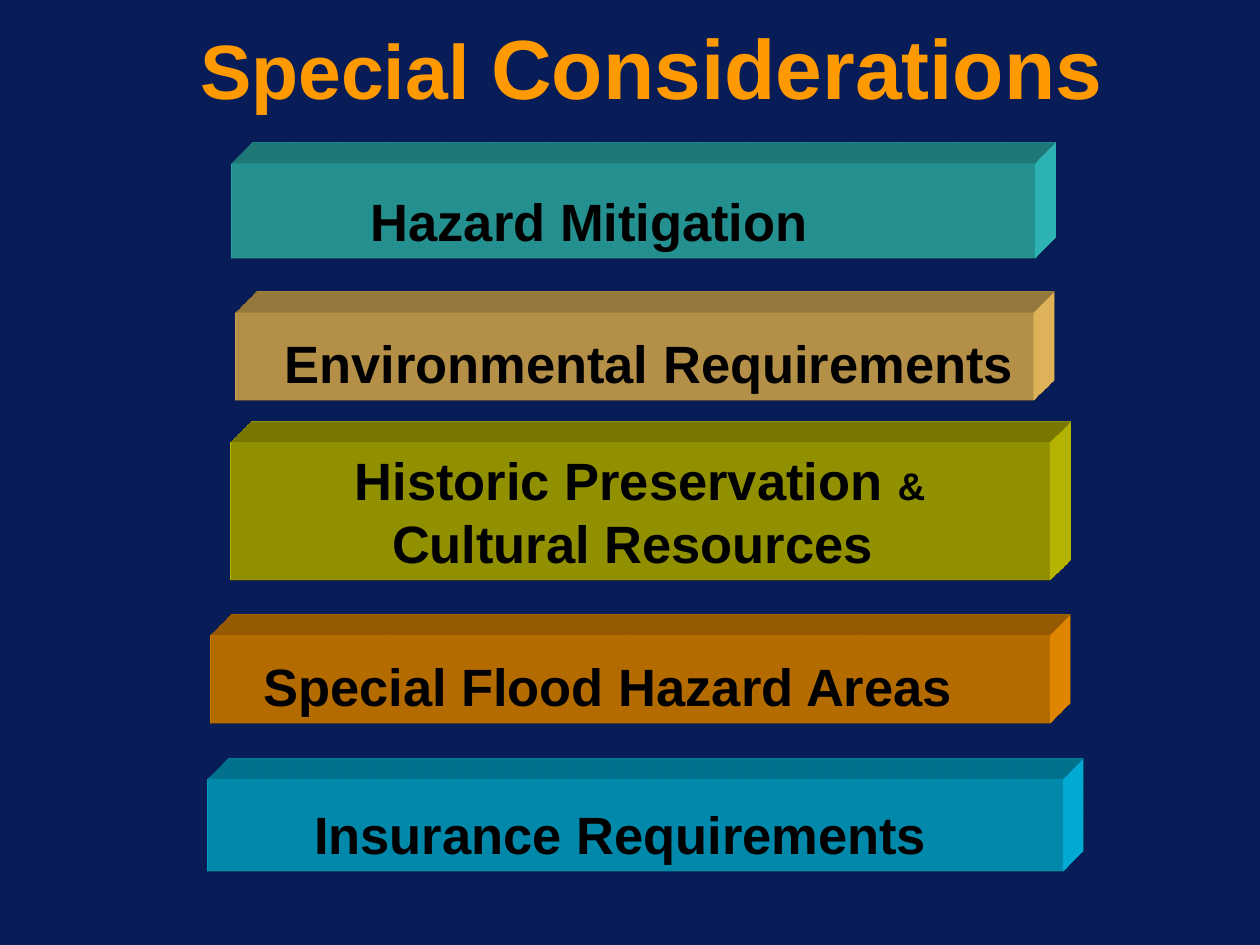
from lxml.etree import fromstring
from pptx import Presentation
from pptx.dml.color import RGBColor as Rgb
from pptx.enum.shapes import MSO_SHAPE as Form
from pptx.enum.text import MSO_ANCHOR as Anchor, MSO_AUTO_SIZE as Fit, PP_ALIGN as Align
from pptx.util import Inches, Pt

HUES = {"navy": "081D58", "orange": "FF9900", "black": "000000", "teal": "33CCCC",
        "sand": "FFCC66", "olive": "CCCC00", "cyan": "00C2F0"}
NS = 'xmlns:a="http://schemas.openxmlformats.org/drawingml/2006/main"'
SCENE = (f'<a:scene3d {NS}><a:camera prst="legacyObliqueTopRight"/>'
         '<a:lightRig rig="legacyFlat3" dir="b"/></a:scene3d>')
DEPTH = (f'<a:sp3d {NS} extrusionH="430200" prstMaterial="legacyMatte">'
         '<a:bevelT w="13500" h="13500" prst="angle"/><a:bevelB w="13500" h="13500" prst="angle"/>'
         '<a:extrusionClr><a:srgbClr val="%s"/></a:extrusionClr></a:sp3d>')
CELL = 0.1   # grid step in inches: 100 columns by 75 rows
SPACE = 0.116  # width of one blank at 30 pt, in inches


def hue(name):
    return Rgb.from_string(HUES[name])


class Deck:
    def __init__(self):
        self.prs = Presentation()
        self.prs.slide_width, self.prs.slide_height = Inches(100 * CELL), Inches(75 * CELL)
        self.slide = self.prs.slides.add_slide(self.prs.slide_layouts[6])
        fill = self.slide.background.fill
        fill.solid()
        fill.fore_color.rgb = hue("navy")

    def grid(self, *cells):
        return [Inches(cell * CELL) for cell in cells]

    def line(self, para, runs, color, gap=1.0, pad=0):
        """Write one centred line; pad shifts it right (+) or left (-), in blanks."""
        if pad:
            side = "marL" if pad > 0 else "marR"
            para._p.get_or_add_pPr().set(side, str(Inches(abs(pad) * SPACE)))
        para.alignment, para.line_spacing = Align.CENTER, gap
        for text, size in runs:
            run = para.add_run()
            run.text = text
            look = {"name": "Arial", "size": Pt(size), "bold": True}
            for key, value in look.items():
                setattr(run.font, key, value)
            run.font.color.rgb = hue(color)

    def title(self, box, runs):
        frame = self.slide.shapes.add_textbox(*self.grid(*box)).text_frame
        frame.word_wrap, frame.vertical_anchor = True, Anchor.MIDDLE
        self.line(frame.paragraphs[0], runs, "orange")

    def bar(self, box, color, lines, gap=1.0):
        """Draw an extruded block with its label."""
        block = self.slide.shapes.add_shape(Form.RECTANGLE, *self.grid(*box))
        block.shadow.inherit = False
        block.fill.solid()
        block.fill.fore_color.rgb = hue(color)
        block.line.fill.background()
        for part in (SCENE, DEPTH % HUES[color]):
            block._element.spPr.append(fromstring(part))
        frame = block.text_frame
        look = {"word_wrap": True, "vertical_anchor": Anchor.TOP,
                "auto_size": Fit.SHAPE_TO_FIT_TEXT}
        for key, value in look.items():
            setattr(frame, key, value)
        for i, (runs, pad) in enumerate(lines):
            para = frame.add_paragraph() if i else frame.paragraphs[0]
            self.line(para, runs, "black", gap, pad)


BARS = [
    ((18.4, 13, 63.7, 7.5), "teal", [([("Hazard Mitigation", 30)], -6)], 1.3),
    ((18.7, 24.8, 63.3, 7), "sand", [([("Environmental Requirements", 30)], 2)], 1.2),
    ((18.3, 35.1, 65, 11), "olive", [([("Historic Preservation ", 30), ("&", 22)], 0),
                                     ([("Cultural Resources", 30)], -1)], 1.0),
    ((16.7, 50.4, 66.6, 7), "orange", [([("Special Flood Hazard Areas", 30)], -3)], 1.2),
    ((16.5, 61.9, 67.8, 7.3), "cyan", [([("Insurance Requirements", 30)], -2)], 1.25),
]


def main():
    deck = Deck()
    deck.title((9.2, 2.6, 85, 5.3), [("Special ", 44), ("Considerations", 48)])
    for bar in BARS:
        deck.bar(*bar)
    deck.prs.save("out.pptx")


if __name__ == "__main__":
    main()
